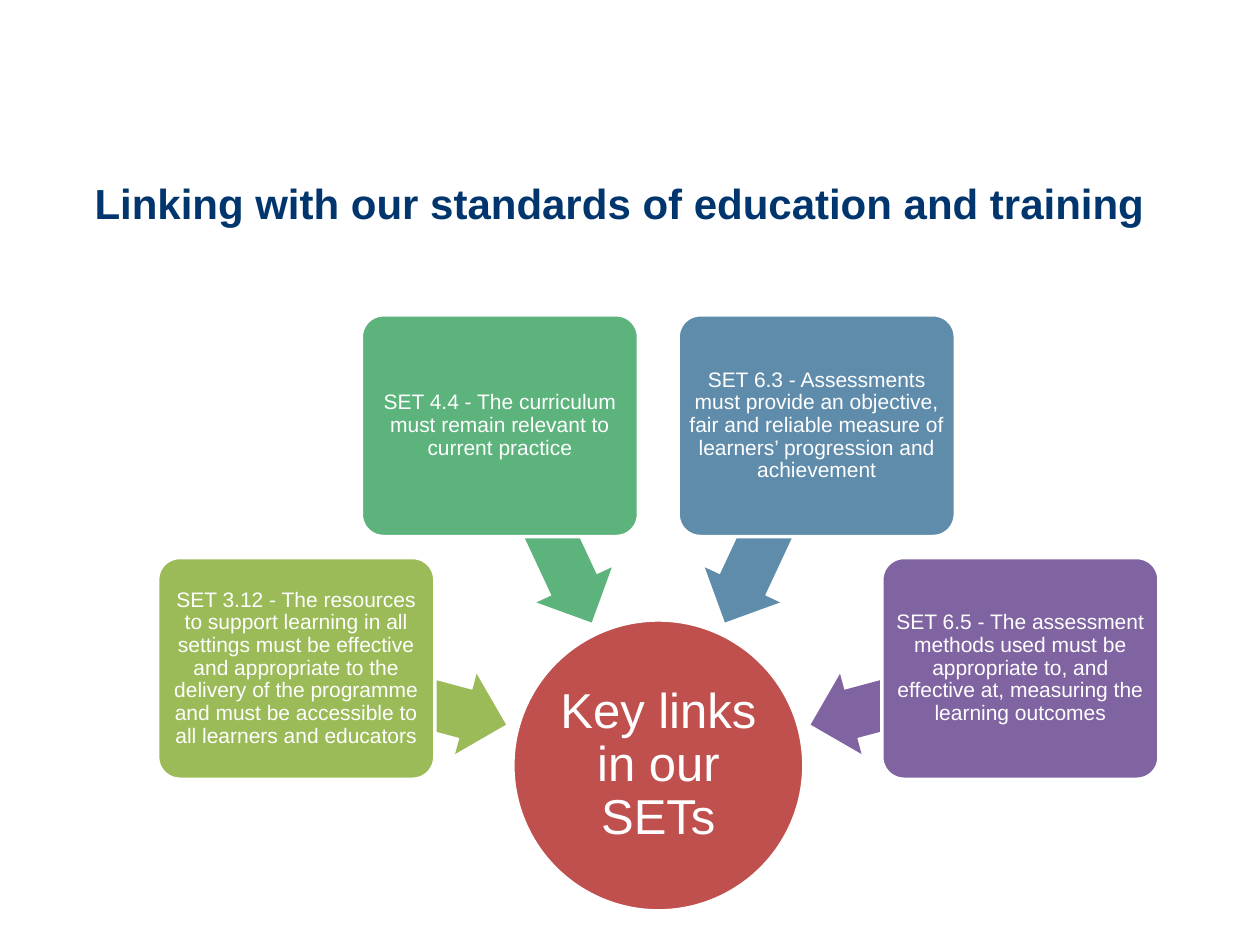
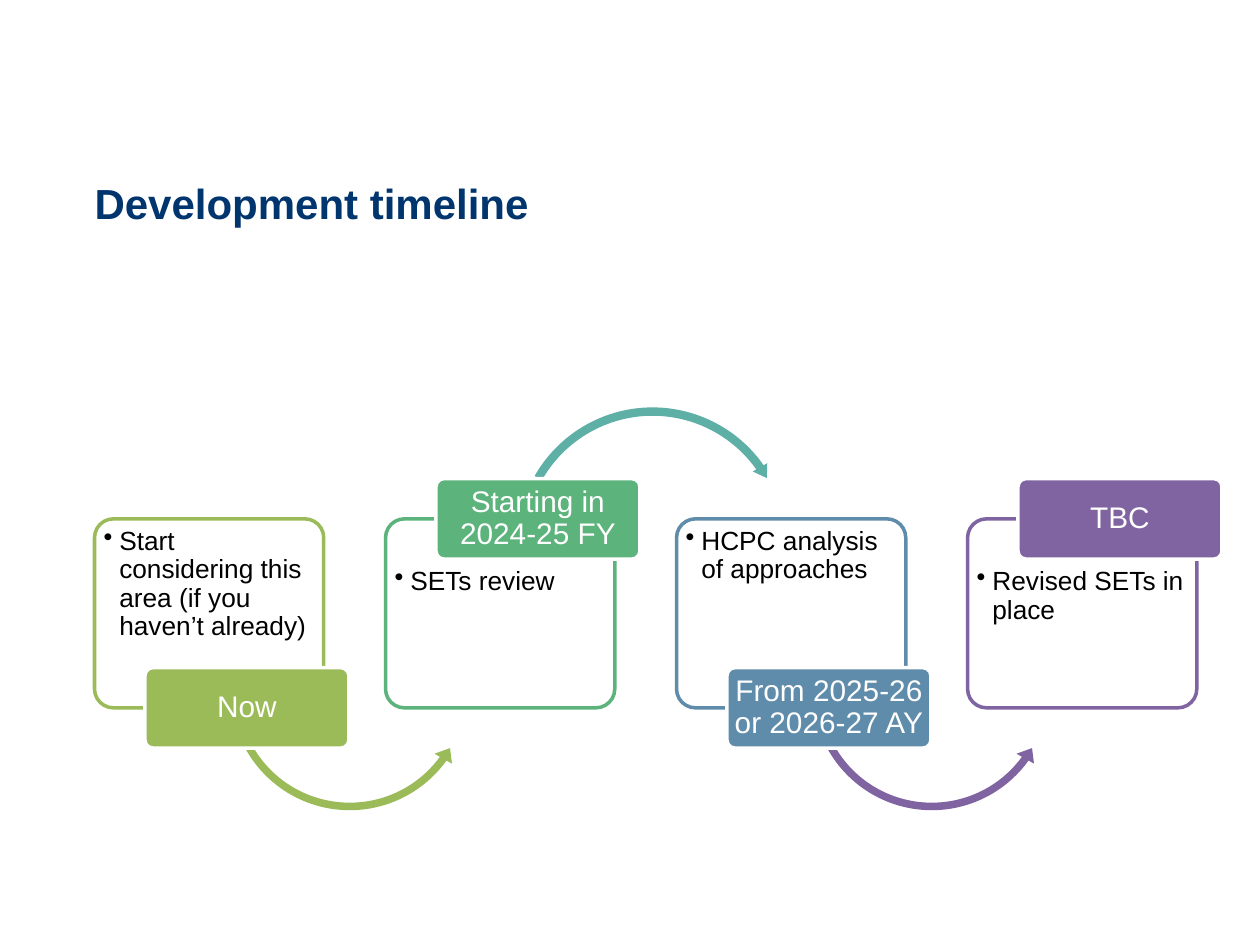
from math import cos, radians, sin

from lxml.etree import SubElement
from pptx import Presentation
from pptx.dml.color import RGBColor
from pptx.enum.shapes import MSO_SHAPE
from pptx.enum.text import MSO_ANCHOR, MSO_AUTO_SIZE, PP_ALIGN
from pptx.oxml.ns import qn
from pptx.util import Pt

NAVY = RGBColor(0x01, 0x35, 0x6D)
WHITE = RGBColor(0xFF, 0xFF, 0xFF)
BLACK = RGBColor(0x00, 0x00, 0x00)
RED = RGBColor(0xC0, 0x50, 0x4D)
LIME = RGBColor(0x9B, 0xBB, 0x59)
GREEN = RGBColor(0x5C, 0xB3, 0x7C)
TEAL = RGBColor(0x5E, 0xAF, 0xA6)
BLUE = RGBColor(0x60, 0x8C, 0xAB)
PURPLE = RGBColor(0x80, 0x64, 0xA2)


def add_block(s, kind, left, top, width, height, fill, line=None, adjustments=()):
    sp = s.shapes.add_shape(kind, Pt(left), Pt(top), Pt(width), Pt(height))
    sp.shadow.inherit = False
    sp.fill.solid()
    sp.fill.fore_color.rgb = fill
    if line is None:
        sp.line.fill.background()
    else:
        sp.line.color.rgb = line
        sp.line.width = Pt(2)
    for i, value in enumerate(adjustments):
        sp.adjustments[i] = value
    return sp


def write(sp, text, size, color, margins, bold=False, align=PP_ALIGN.CENTER,
          anchor=MSO_ANCHOR.MIDDLE, spacing=0.9, bullet=False):
    tf = sp.text_frame
    left, top, right, bottom = (Pt(m) for m in margins)
    frame = {"word_wrap": True, "auto_size": MSO_AUTO_SIZE.NONE,
             "vertical_anchor": anchor, "margin_left": left, "margin_top": top,
             "margin_right": right, "margin_bottom": bottom}
    for name, value in frame.items():
        setattr(tf, name, value)
    p = tf.paragraphs[0]
    if bullet:
        pPr = p._p.get_or_add_pPr()
        pPr.set("marL", str(Pt(9)))
        pPr.set("indent", str(Pt(-9)))
        SubElement(pPr, qn("a:buChar")).set("char", "•")
    p.alignment = align
    p.line_spacing = spacing
    r = p.add_run()
    r.text = text
    for name, value in {"name": "Arial", "size": Pt(size), "bold": bold}.items():
        setattr(r.font, name, value)
    r.font.color.rgb = color


prs = Presentation()
prs.slide_width, prs.slide_height = Pt(720), Pt(540)
layout = prs.slide_layouts[5]
title_place = {"left": Pt(54), "top": Pt(101.5), "width": Pt(645), "height": Pt(36.7)}
for name, value in title_place.items():
    setattr(layout.placeholders[0], name, value)

slides = []
for title in ("Linking with our standards of education and training", "Development timeline"):
    s = prs.slides.add_slide(layout)
    write(s.shapes.title, title, 24, NAVY, (0, 0, 7.2, 0), bold=True,
          align=PP_ALIGN.LEFT, anchor=MSO_ANCHOR.TOP, spacing=1.0)
    slides.append(s)
links_slide, timeline_slide = slides

HUB_X, HUB_Y, HUB_SIZE = 376.2, 437.4, 166.3
BOX_W, BOX_H, BOX_RADIUS = 158.4, 126.7, 214.2
ARROW_W, ARROW_H, ARROW_RADIUS = 123.8, 47.5, 152

hub = add_block(links_slide, MSO_SHAPE.OVAL, HUB_X - HUB_SIZE / 2, HUB_Y - HUB_SIZE / 2,
                HUB_SIZE, HUB_SIZE, RED, WHITE)
write(hub, "Key links in our SETs", 28, WHITE, (1.4,) * 4)

standards = [
    (LIME, "SET 3.12 - The resources to support learning in all settings must be effective "
           "and appropriate to the delivery of the programme and must be accessible to all "
           "learners and educators"),
    (GREEN, "SET 4.4 - The curriculum must remain relevant to current practice"),
    (BLUE, "SET 6.3 - Assessments must provide an objective, fair and reliable measure of "
           "learners’ progression and achievement"),
    (PURPLE, "SET 6.5 - The assessment methods used must be appropriate to, and effective "
             "at, measuring the learning outcomes"),
]
for i, (color, text) in enumerate(standards):
    angle = 195 + 50 * i
    dx, dy = cos(radians(angle)), sin(radians(angle))
    arrow = add_block(links_slide, MSO_SHAPE.LEFT_ARROW,
                      HUB_X + ARROW_RADIUS * dx - ARROW_W / 2,
                      HUB_Y + ARROW_RADIUS * dy - ARROW_H / 2,
                      ARROW_W, ARROW_H, color, adjustments=(0.6, 0.5))
    arrow.rotation = angle
    box = add_block(links_slide, MSO_SHAPE.ROUNDED_RECTANGLE,
                    HUB_X + BOX_RADIUS * dx - BOX_W / 2,
                    HUB_Y + BOX_RADIUS * dy - BOX_H / 2,
                    BOX_W, BOX_H, color, WHITE, (0.1,))
    write(box, text, 12, WHITE, (2,) * 4)

CARD_LEFT, CARD_TOP, CARD_W, CARD_H, CARD_STEP = 54, 296.5, 131, 108, 166.3
LABEL_W, LABEL_H, LABEL_SHIFT = 116.6, 46, 28.8
UNDER = (MSO_SHAPE.LEFT_CIRCULAR_ARROW, 74.2, 323.3, 143.3, (0.03, 3.76, 21.51, 90.24, 0.04))
OVER = (MSO_SHAPE.CIRCULAR_ARROW, 72.7, 230.4, 159.8, (0.03, 3.34, 194.9, 125.76, 0.03))

stages = [
    (LIME, "Now", "Start considering this area (if you haven’t already)", UNDER, LIME),
    (GREEN, "Starting in 2024-25 FY", "SETs review", OVER, TEAL),
    (BLUE, "From 2025-26 or 2026-27 AY", "HCPC analysis of approaches", UNDER, PURPLE),
    (PURPLE, "TBC", "Revised SETs in place", None, None),
]
for i, (color, label_text, detail, arc, arc_color) in enumerate(stages):
    left = CARD_LEFT + CARD_STEP * i
    label_on_top = i % 2 == 1
    card = add_block(timeline_slide, MSO_SHAPE.ROUNDED_RECTANGLE, left, CARD_TOP,
                     CARD_W, CARD_H, WHITE, color, (0.1,))
    write(card, detail, 15, BLACK, (2, 25 if label_on_top else 2, 2, 2),
          align=PP_ALIGN.LEFT, anchor=MSO_ANCHOR.TOP, bullet=True)
    if arc:
        kind, shift, top, size, adjustments = arc
        add_block(timeline_slide, kind, left + shift, top, size, size, arc_color,
                  adjustments=adjustments)
    edge = CARD_TOP if label_on_top else CARD_TOP + CARD_H
    label = add_block(timeline_slide, MSO_SHAPE.ROUNDED_RECTANGLE, left + LABEL_SHIFT,
                      edge - LABEL_H / 2, LABEL_W, LABEL_H, color, WHITE, (0.1,))
    write(label, label_text, 17, WHITE, (2.6, 1.7, 2.6, 1.7))

prs.save("out.pptx")
